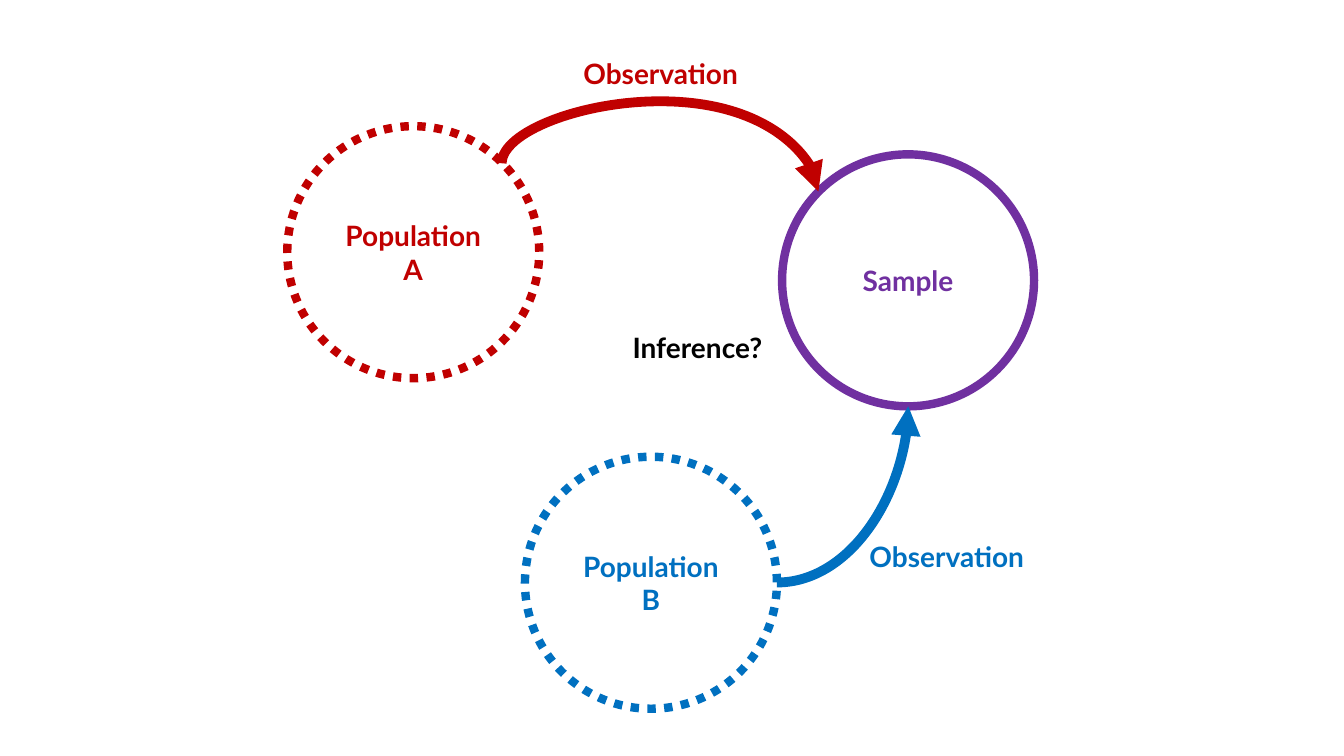
from lxml.etree import SubElement
from pptx import Presentation
from pptx.dml.color import RGBColor
from pptx.enum.dml import MSO_LINE
from pptx.enum.shapes import MSO_CONNECTOR, MSO_SHAPE
from pptx.enum.text import MSO_ANCHOR, MSO_AUTO_SIZE, PP_ALIGN
from pptx.oxml.ns import qn
from pptx.util import Cm, Pt

hues = {"red": "C00000", "blue": "0070C0", "violet": "7030A0", "black": "000000"}


def write(frame, words, hue):
    frame.word_wrap = True
    para = frame.paragraphs[0]
    para.alignment = PP_ALIGN.CENTER
    run = para.add_run()
    run.text = words
    run.font.name = "Lato"
    run.font.size = Pt(20)
    run.font.bold = True
    run.font.color.rgb = RGBColor.from_string(hues[hue])


deck = Presentation()
deck.slide_width, deck.slide_height = Cm(33.87), Cm(19.05)
slide = deck.slides.add_slide(deck.slide_layouts[6])
shapes = slide.shapes

size = Cm(6.35)
circles = [
    ("Population A", 7.24, 3.18, "red", True),
    ("Sample", 19.71, 3.89, "violet", False),
    ("Population B", 13.23, 11.51, "blue", True),
]
for words, left, top, hue, dotted in circles:
    ring = shapes.add_shape(MSO_SHAPE.OVAL, Cm(left), Cm(top), size, size)
    ring.shadow.inherit = False
    ring.fill.background()
    ring.line.color.rgb = RGBColor.from_string(hues[hue])
    ring.line.width = Pt(6)
    if dotted:
        ring.line.dash_style = MSO_LINE.ROUND_DOT
    ring.text_frame.vertical_anchor = MSO_ANCHOR.MIDDLE
    write(ring.text_frame, words, hue)

arrows = [
    ("red", (16.99, 0.48, 16.28, 8.46), "curvedConnector3", 270, -220000),
    ("blue", (19.58, 14.68, 22.89, 10.24), "curvedConnector2", 0, None),
]
for hue, ends, form, turn, bend in arrows:
    arrow = shapes.add_connector(MSO_CONNECTOR.CURVE, *[Cm(end) for end in ends])
    arrow.line.color.rgb = RGBColor.from_string(hues[hue])
    arrow.line.width = Pt(7)
    props = arrow._element.spPr
    props.find(qn("a:xfrm")).set("rot", str(turn * 60000))
    geom = props.find(qn("a:prstGeom"))
    geom.set("prst", form)
    if bend is not None:
        guide = SubElement(geom.find(qn("a:avLst")), qn("a:gd"))
        guide.set("name", "adj1")
        guide.set("fmla", f"val {bend}")
    SubElement(props.find(qn("a:ln")), qn("a:tailEnd")).set("type", "triangle")
    SubElement(props, qn("a:effectLst"))

labels = [
    ("Observation", 14.02, 1.3, 5.26, "red"),
    ("Observation", 21.23, 13.46, 5.26, "blue"),
    ("Inference?", 15.44, 8.2, 4.27, "black"),
]
for words, left, top, width, hue in labels:
    box = shapes.add_textbox(Cm(left), Cm(top), Cm(width), Cm(1.11))
    write(box.text_frame, words, hue)
    box.text_frame.auto_size = MSO_AUTO_SIZE.SHAPE_TO_FIT_TEXT

deck.save("out.pptx")
